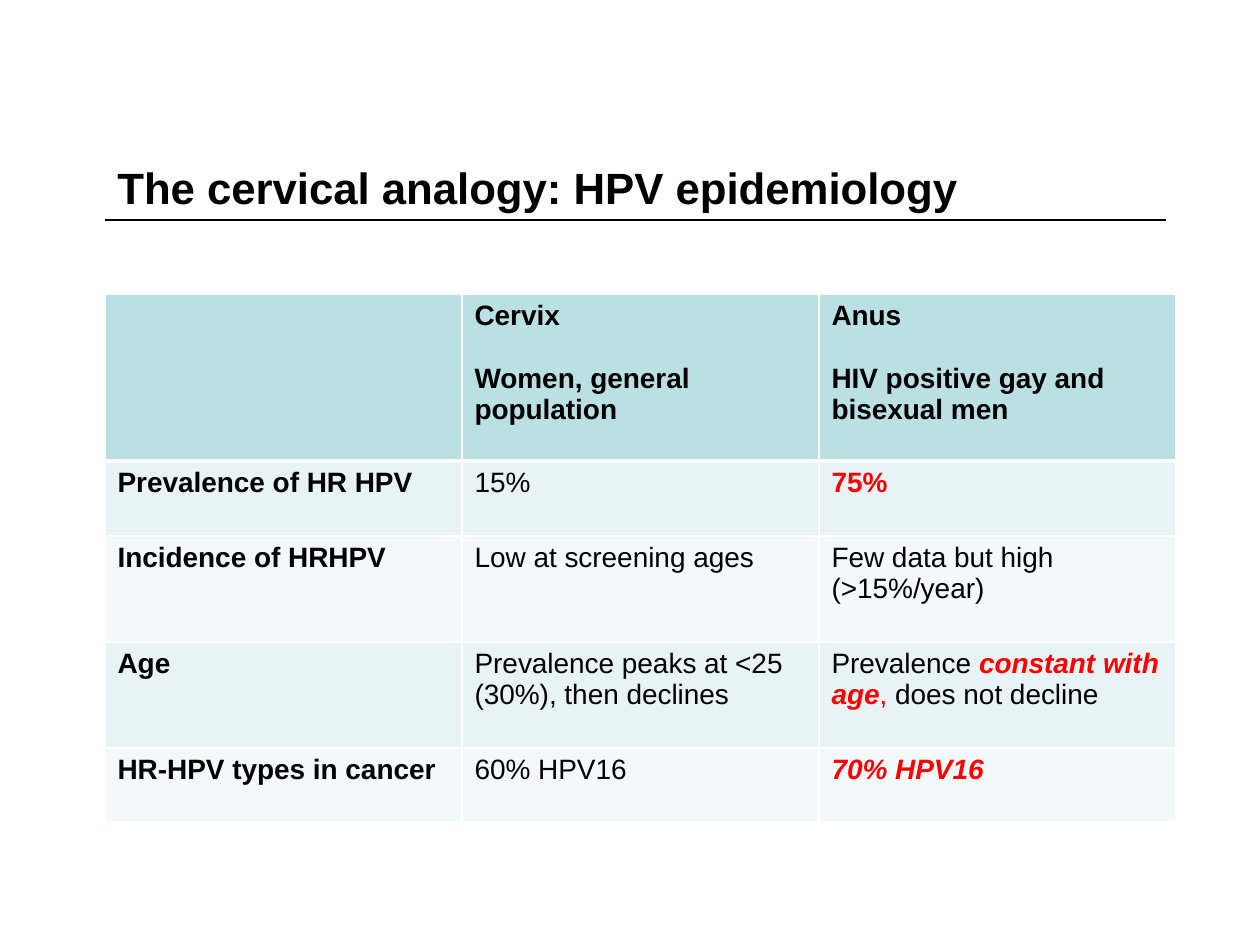
import pptx
import pptx.dml.color
import pptx.enum.shapes
import pptx.enum.text
import pptx.oxml
import pptx.oxml.ns
import pptx.util
import lxml.etree

EMU_PER_PX = 914400 // 126
BLACK = pptx.dml.color.RGBColor(0x00, 0x00, 0x00)
RED = pptx.dml.color.RGBColor(0xFF, 0x00, 0x00)
WHITE = pptx.dml.color.RGBColor(0xFF, 0xFF, 0xFF)
HEADER_FILL = pptx.dml.color.RGBColor(0xBB, 0xE0, 0xE3)
BAND_FILLS = (
    pptx.dml.color.RGBColor(0xE7, 0xF3, 0xF4),
    pptx.dml.color.RGBColor(0xF3, 0xF9, 0xFA),
)

BOLD = {"bold": True}
PLAIN = {}
RED_BOLD = {"bold": True, "color": RED}
RED_STRESS = {"bold": True, "italic": True, "color": RED}

HEADER = [
    [],
    [[("Cervix", BOLD)], [("Women, general population", BOLD)]],
    [[("Anus", BOLD)], [("HIV positive gay and bisexual men", BOLD)]],
]
BODY = [
    ("Prevalence of HR HPV", "15%", [("75%", RED_BOLD)]),
    ("Incidence of HRHPV", "Low at screening ages",
     [("Few data but high (>15%/year)", PLAIN)]),
    ("Age", "Prevalence peaks at <25 (30%), then declines",
     [("Prevalence ", PLAIN), ("constant with age", RED_STRESS),
      (",", {"color": RED}), (" does not decline", PLAIN)]),
    ("HR-HPV types in cancer", "60% HPV16", [("70% HPV16", RED_STRESS)]),
]
ROW_HEIGHTS = [167, 75, 106, 106, 74]
COLUMN_WIDTH = 357


def px(length):
    return pptx.util.Emu(length * EMU_PER_PX)


def add_text(paragraph, text, size=16, bold=False, italic=False, color=BLACK):
    run = paragraph.add_run()
    run.text = text
    run.font.name = "Arial"
    run.font.size = pptx.util.Pt(size)
    run.font.bold = bold
    run.font.italic = italic
    run.font.color.rgb = color


class SlideBuilder:
    def __init__(self, slide):
        self.slide = slide
        self.paragraph_gap = pptx.util.Pt(18)
        self.border_width = 1
        self.header_border_width = 3

    def title(self, text, left, top, width, height):
        shape = self.slide.shapes.add_textbox(px(left), px(top), px(width), px(height))
        frame = shape.text_frame
        frame.word_wrap = True
        frame.margin_top = px(11)
        frame.vertical_anchor = pptx.enum.text.MSO_ANCHOR.TOP
        add_text(frame.paragraphs[0], text, size=25, bold=True)

    def rule(self, left, right, y):
        connector = self.slide.shapes.add_connector(
            pptx.enum.shapes.MSO_CONNECTOR.STRAIGHT, px(left), px(y), px(right), px(y))
        connector.line.color.rgb = BLACK
        connector.line.width = pptx.util.Pt(0.75)
        properties = connector._element.spPr
        lxml.etree.SubElement(properties, pptx.oxml.ns.qn("a:effectLst"))

    def borders(self, cell, top, bottom):
        properties = cell._tc.get_or_add_tcPr()
        widths = {"L": self.border_width, "R": self.border_width, "T": top, "B": bottom}
        for position, (side, width) in enumerate(widths.items()):
            line = pptx.oxml.parse_xml(
                f'<a:ln{side} {pptx.oxml.ns.nsdecls("a")} w="{pptx.util.Pt(width)}">'
                f'<a:solidFill><a:srgbClr val="{WHITE}"/></a:solidFill></a:ln{side}>')
            properties.insert(position, line)

    def cell(self, cell, paragraphs, fill):
        cell.fill.solid()
        cell.fill.fore_color.rgb = fill
        for index, runs in enumerate(paragraphs):
            frame = cell.text_frame
            paragraph = frame.add_paragraph() if index else frame.paragraphs[0]
            if index:
                paragraph.space_before = self.paragraph_gap
            for text, style in runs:
                add_text(paragraph, text, **style)

    def table(self, rows, left, top, column_width, row_heights):
        column_count = len(rows[0])
        table = self.slide.shapes.add_table(
            len(rows), column_count, px(left), px(top),
            px(column_width * column_count), px(sum(row_heights))).table
        for column in table.columns:
            column.width = px(column_width)
        for row_index, contents in enumerate(rows):
            table.rows[row_index].height = px(row_heights[row_index])
            fill = BAND_FILLS[(row_index - 1) % 2] if row_index else HEADER_FILL
            top_width = self.header_border_width if row_index == 1 else self.border_width
            bottom_width = self.border_width if row_index else self.header_border_width
            for column_index, paragraphs in enumerate(contents):
                cell = table.cell(row_index, column_index)
                self.cell(cell, paragraphs, fill)
                self.borders(cell, top_width, bottom_width)


def main():
    presentation = pptx.Presentation()
    presentation.slide_width = pptx.util.Inches(10)
    presentation.slide_height = pptx.util.Inches(7.5)
    builder = SlideBuilder(presentation.slides.add_slide(presentation.slide_layouts[6]))
    builder.rule(105, 1166, 220)
    builder.title("The cervical analogy: HPV epidemiology", 105, 150, 1071, 84)
    body = [[[[(label, BOLD)]], [[(cervix, PLAIN)]], [anus]]
            for label, cervix, anus in BODY]
    builder.table([HEADER] + body, 105, 294, COLUMN_WIDTH, ROW_HEIGHTS)
    presentation.save("out.pptx")


if __name__ == "__main__":
    main()
